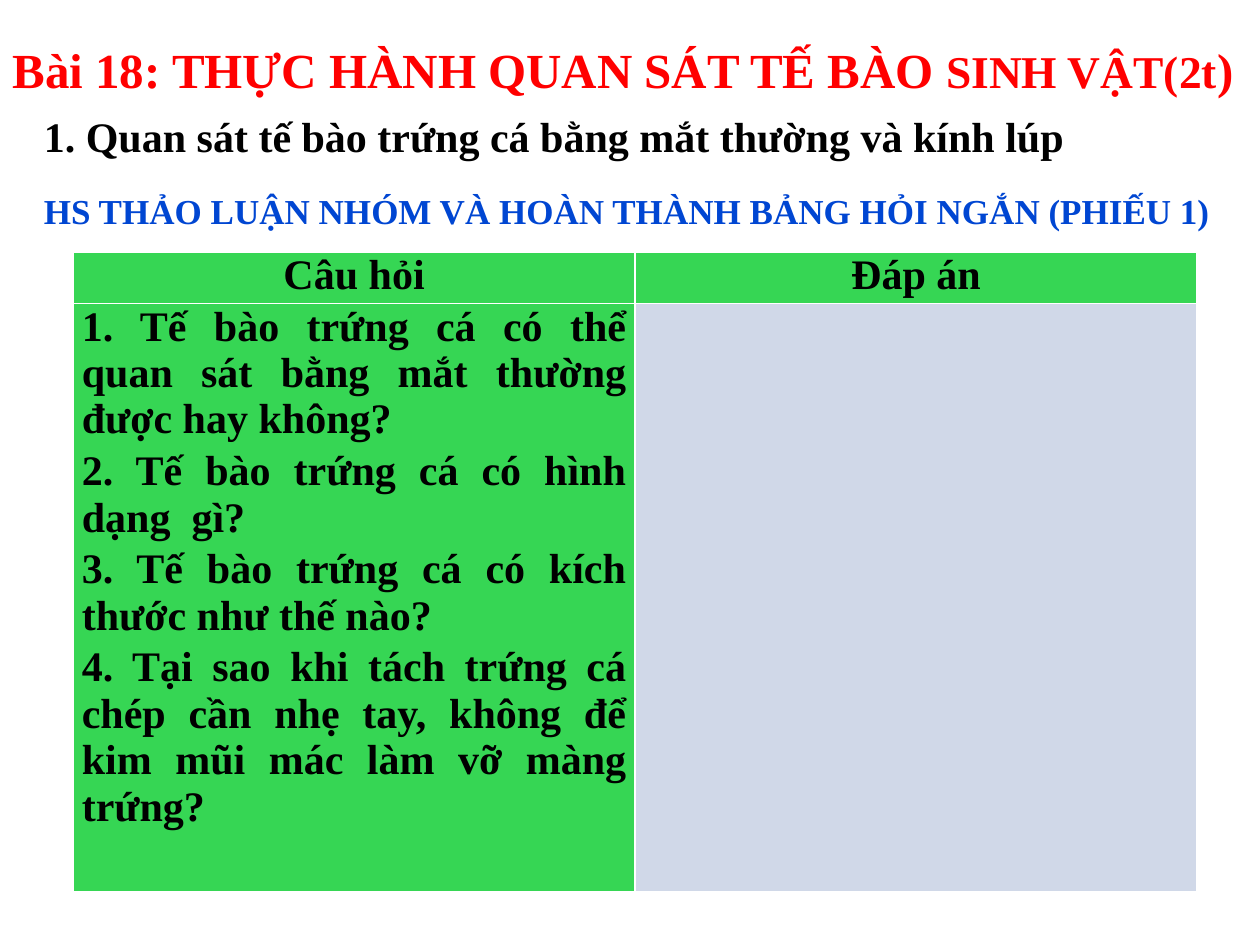
from dataclasses import dataclass

import pptx
import pptx.dml.color
import pptx.enum.text
import pptx.util

EMU_PER_PX = 9144  # 100 px to the inch
FONT = "Times New Roman"
COLORS = {
    "title": "FF0000",
    "text": "000000",
    "task": "0046D2",
    "background": "FFFFFF",
    "question": "36D654",
    "answer": "D0D8E8",
}
ALIGN = pptx.enum.text.PP_ALIGN
ANCHOR = pptx.enum.text.MSO_ANCHOR


@dataclass
class Box:
    left: int
    top: int
    width: int
    height: int


@dataclass
class Line:
    text: str
    box: Box
    size: int
    color: str
    fill: str | None = None


TITLE_BOX = Box(0, 26, 1000, 57)
TITLE_RUNS = [
    ("Bài 18: THỰC HÀNH QUAN SÁT TẾ BÀO ", 28),
    ("SINH VẬT(2t", 26),
    (")", 28),
]
LINES = [
    Line("1. Quan sát tế bào trứng cá bằng mắt thường và kính lúp",
         Box(25, 83, 867, 50), 24, "text"),
    Line("HS THẢO LUẬN NHÓM VÀ HOÀN THÀNH BẢNG HỎI NGẮN (PHIẾU 1)",
         Box(25, 145, 950, 44), 20, "task", "background"),
]
TABLE_BOX = Box(58, 200, 892, 508)
HEADER_HEIGHT = 41
HEADERS = ["Câu hỏi", "Đáp án"]
QUESTIONS = [
    "1. Tế bào trứng cá có thể quan sát bằng mắt thường được hay không?",
    "2. Tế bào trứng cá có hình dạng  gì?",
    "3. Tế bào trứng cá có kích thước như thế nào?",
    "4. Tại sao khi tách trứng cá chép cần nhẹ tay, không để kim mũi mác làm vỡ màng trứng?",
]


def px(length: int) -> pptx.util.Emu:
    return pptx.util.Emu(length * EMU_PER_PX)


def bounds(box: Box) -> list[pptx.util.Emu]:
    return [px(length) for length in (box.left, box.top, box.width, box.height)]


def rgb(name: str) -> pptx.dml.color.RGBColor:
    return pptx.dml.color.RGBColor.from_string(COLORS[name])


def set_fill(target, name: str) -> None:
    target.fill.solid()
    target.fill.fore_color.rgb = rgb(name)


def format_font(font, color: str, size: int | None = None) -> None:
    font.name = FONT
    font.bold = True
    font.color.rgb = rgb(color)
    if size:
        font.size = pptx.util.Pt(size)


def add_title(slide) -> None:
    title = slide.shapes.title
    title.left, title.top, title.width, title.height = bounds(TITLE_BOX)
    frame = title.text_frame
    frame.auto_size = pptx.enum.text.MSO_AUTO_SIZE.NONE
    frame.vertical_anchor = ANCHOR.TOP
    paragraph = frame.paragraphs[0]
    paragraph.alignment = ALIGN.LEFT
    format_font(paragraph.font, "title")
    for text, size in TITLE_RUNS:
        run = paragraph.add_run()
        run.text = text
        run.font.size = pptx.util.Pt(size)


def add_line(slide, line: Line) -> None:
    shape = slide.shapes.add_textbox(*bounds(line.box))
    if line.fill:
        set_fill(shape, line.fill)
    frame = shape.text_frame
    frame.word_wrap = True
    frame.vertical_anchor = ANCHOR.MIDDLE if line.fill else ANCHOR.TOP
    paragraph = frame.paragraphs[0]
    paragraph.text = line.text
    format_font(paragraph.font, line.color, line.size)


def fill_cell(cell, texts: list[str], alignment, fill: str) -> None:
    """Colour a cell and write one paragraph for each text."""
    set_fill(cell, fill)
    cell.margin_left = cell.margin_right = px(7)
    cell.margin_top = cell.margin_bottom = 0
    cell.text = "\n".join(texts)
    for paragraph in cell.text_frame.paragraphs:
        paragraph.alignment = alignment
        paragraph.space_after = pptx.util.Pt(3)
        format_font(paragraph.font, "text", 24)


def add_question_table(slide) -> None:
    table = slide.shapes.add_table(2, len(HEADERS), *bounds(TABLE_BOX)).table
    table.rows[0].height = px(HEADER_HEIGHT)
    table.rows[1].height = px(TABLE_BOX.height - HEADER_HEIGHT)
    for column, header in enumerate(HEADERS):
        fill_cell(table.cell(0, column), [header], ALIGN.CENTER, "question")
    fill_cell(table.cell(1, 0), QUESTIONS, ALIGN.JUSTIFY, "question")
    fill_cell(table.cell(1, 1), [], ALIGN.JUSTIFY, "answer")


def main() -> None:
    presentation = pptx.Presentation()
    presentation.slide_width, presentation.slide_height = px(1000), px(750)
    slide = presentation.slides.add_slide(presentation.slide_layouts[5])
    set_fill(slide.background, "background")
    add_title(slide)
    add_question_table(slide)
    for line in LINES:
        add_line(slide, line)
    presentation.save("out.pptx")


if __name__ == "__main__":
    main()
